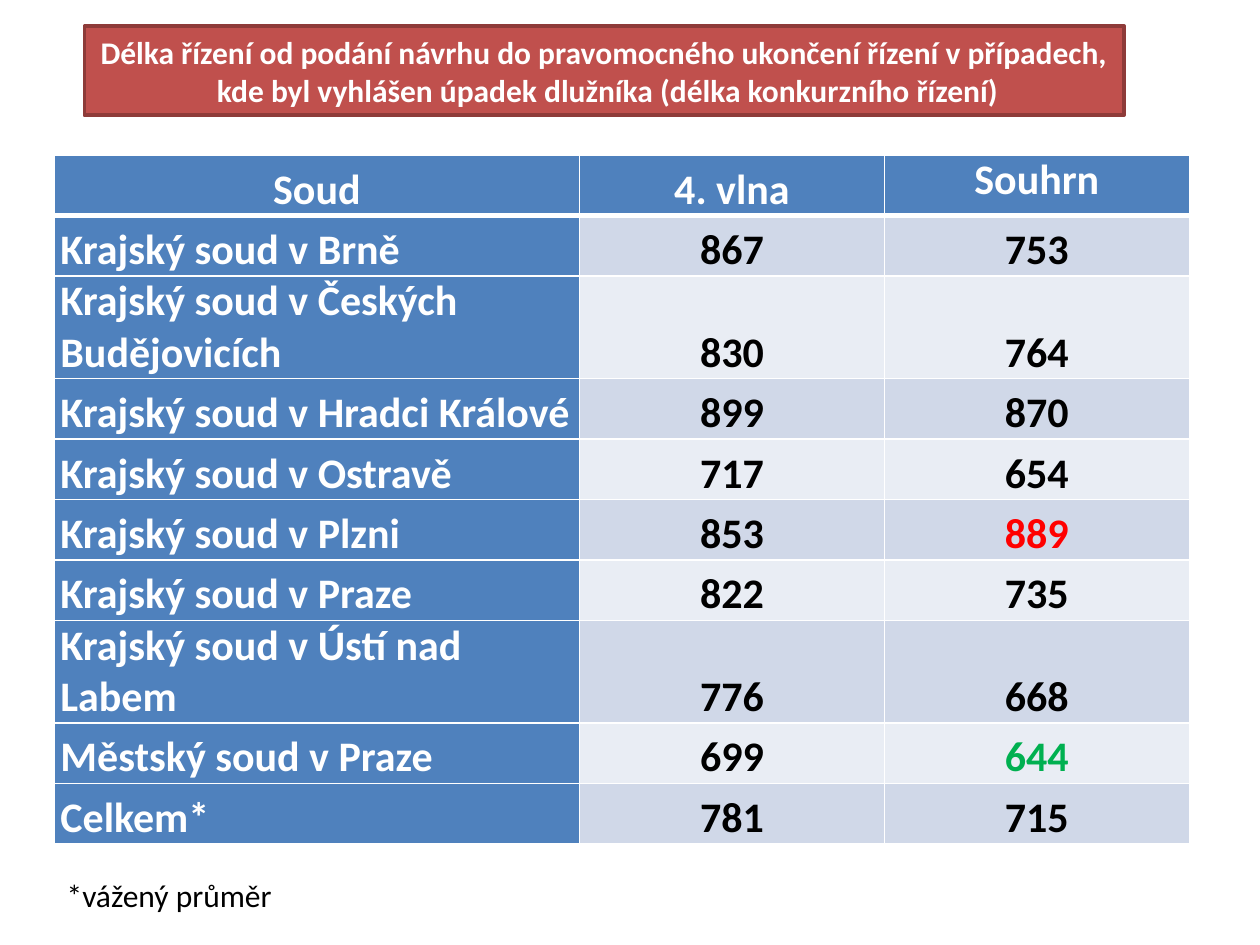
from collections import namedtuple
from dataclasses import dataclass

from lxml import etree
from pptx import Presentation
from pptx.dml.color import RGBColor
from pptx.enum.shapes import MSO_SHAPE
from pptx.enum.text import MSO_ANCHOR, MSO_AUTO_SIZE, PP_ALIGN
from pptx.oxml.ns import qn
from pptx.util import Inches, Pt

LEFT, CENTER = PP_ALIGN.LEFT, PP_ALIGN.CENTER
TOP, MIDDLE, BOTTOM = MSO_ANCHOR.TOP, MSO_ANCHOR.MIDDLE, MSO_ANCHOR.BOTTOM
GROW = MSO_AUTO_SIZE.SHAPE_TO_FIT_TEXT
RECT = MSO_SHAPE.RECTANGLE
WIDTH, HEIGHT = Inches(10), Inches(7.5)
COLS, ROWS = 40, 30

Box = namedtuple("Box", "left top width height")


@dataclass(frozen=True)
class Theme:
    """Colours, font and type sizes of the slide."""
    font: str = "Calibri"
    large: int = 24
    small: int = 18
    white: str = "FFFFFF"
    black: str = "000000"
    blue: str = "4F81BD"
    bands: tuple = ("D0D8E8", "E9EDF4")
    red: str = "C0504D"
    edge: str = "8E3B39"
    high: str = "FF0000"
    low: str = "00B050"
    thin: float = 1
    thick: float = 3


THEME = Theme()
HEADS = ("Soud", "4. vlna", "Souhrn")
SPANS = (16.68, 9.68, 9.68)
STEP = 1.92
COURTS = (
    ("Krajský soud v Brně", 867, 753),
    ("Krajský soud v Českých Budějovicích", 830, 764),
    ("Krajský soud v Hradci Králové", 899, 870),
    ("Krajský soud v Ostravě", 717, 654),
    ("Krajský soud v Plzni", 853, 889),
    ("Krajský soud v Praze", 822, 735),
    ("Krajský soud v Ústí nad Labem", 776, 668),
    ("Městský soud v Praze", 699, 644),
    ("Celkem*", 781, 715),
)
TITLE = (
    "Délka řízení od podání návrhu do pravomocného ukončení řízení v případech,",
    " kde byl vyhlášen úpadek dlužníka (délka konkurzního řízení)",
)
NOTE = ("*vážený průměr",)


def grid(left, top, width, height):
    """Turn grid columns and rows into a box of slide lengths."""
    col, row = WIDTH / COLS, HEIGHT / ROWS
    return Box(int(left * col), int(top * row), int(width * col), int(height * row))


def apply(item, values):
    """Set each attribute in values on the item."""
    for name, value in values.items():
        setattr(item, name, value)


def write(frame, lines, size, color, bold, align):
    """Fill a text frame with one paragraph for each line."""
    for num, line in enumerate(lines):
        para = frame.add_paragraph() if num else frame.paragraphs[0]
        para.alignment = align
        run = para.add_run()
        run.text = line
        apply(run.font, {"name": THEME.font, "size": Pt(size), "bold": bold})
        run.font.color.rgb = RGBColor.from_string(color)


def paint(fill, color):
    """Give a fill one solid colour."""
    fill.solid()
    fill.fore_color.rgb = RGBColor.from_string(color)


def border(cell, widths):
    """Draw white cell borders, with widths keyed by side."""
    props = cell._tc.get_or_add_tcPr()
    for side, width in widths.items():
        line = etree.SubElement(props, qn(f"a:ln{side}"), w=str(Pt(width)))
        solid = etree.SubElement(line, qn("a:solidFill"))
        etree.SubElement(solid, qn("a:srgbClr"), val=THEME.white)


def banner(slide, box):
    """Place the red title panel."""
    panel = slide.shapes.add_shape(RECT, *box)
    panel.shadow.inherit = False
    paint(panel.fill, THEME.red)
    panel.line.color.rgb = RGBColor.from_string(THEME.edge)
    panel.line.width = Pt(2)
    frame = panel.text_frame
    apply(frame, {"word_wrap": False, "auto_size": GROW, "vertical_anchor": MIDDLE})
    write(frame, TITLE, THEME.small, THEME.white, True, CENTER)


def courts(slide, box):
    """Place the table of courts, marking the extremes of the last column."""
    data = (HEADS,) + COURTS
    holder = slide.shapes.add_table(len(data), len(HEADS), *box)
    table = holder.table
    for col, span in zip(table.columns, SPANS):
        col.width = int(box.width * span / sum(SPANS))
    for row in table.rows:
        row.height = int(HEIGHT / ROWS * STEP)
    holder.height = box.height
    totals = [row[-1] for row in COURTS]
    marks = {max(totals): THEME.high, min(totals): THEME.low}
    margins = {"margin_left": Inches(0.05), "margin_right": Inches(0.05),
               "margin_top": 0, "margin_bottom": 0}
    last = len(HEADS) - 1
    for r, row in enumerate(data):
        for c, value in enumerate(row):
            cell = table.cell(r, c)
            head, label = r == 0, r == 0 or c == 0
            apply(cell, margins)
            cell.vertical_anchor = TOP if head and c == last else BOTTOM
            border(cell, {"L": THEME.thin, "R": THEME.thin,
                          "T": THEME.thick if r == 1 else THEME.thin,
                          "B": THEME.thick if head else THEME.thin})
            paint(cell.fill, THEME.blue if label else THEME.bands[(r - 1) % 2])
            ink = marks.get(value, THEME.black) if c == last else THEME.black
            write(cell.text_frame, [str(value)], THEME.large,
                  THEME.white if label else ink, True,
                  CENTER if head or c else LEFT)


def footnote(slide, box):
    """Place the note below the table."""
    frame = slide.shapes.add_textbox(*box).text_frame
    apply(frame, {"word_wrap": False, "auto_size": GROW})
    write(frame, NOTE, THEME.small, THEME.black, False, LEFT)


def main():
    """Build and save the slide."""
    deck = Presentation()
    apply(deck, {"slide_width": WIDTH, "slide_height": HEIGHT})
    slide = deck.slides.add_slide(deck.slide_layouts[6])
    courts(slide, grid(1.72, 4.92, sum(SPANS), 21.76))
    banner(slide, grid(2.68, 0.82, 33, 2.84))
    footnote(slide, grid(1.72, 27.6, 7.4, 1.6))
    deck.save("out.pptx")


if __name__ == "__main__":
    main()
